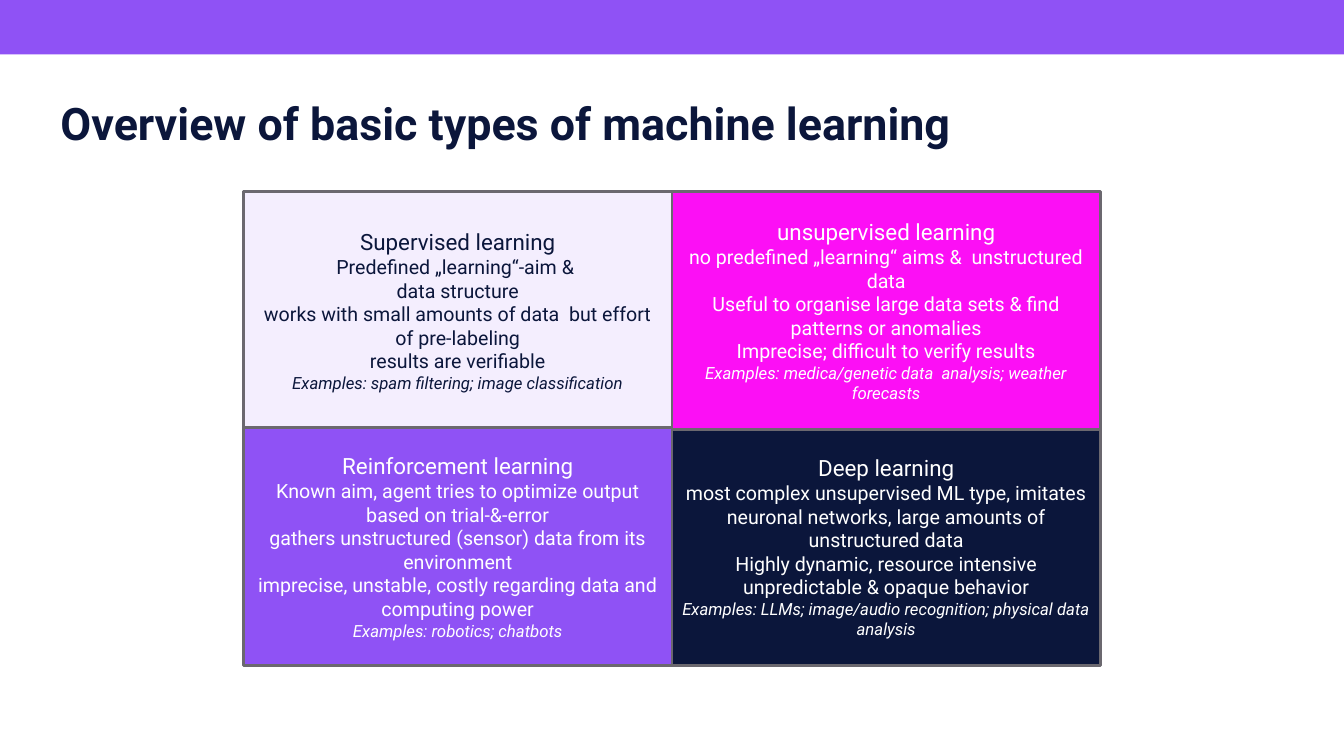
from dataclasses import dataclass

from pptx import Presentation
from pptx.dml.color import RGBColor
from pptx.enum.shapes import MSO_SHAPE
from pptx.enum.text import MSO_ANCHOR, MSO_AUTO_SIZE, PP_ALIGN
from pptx.shapes.autoshape import Shape
from pptx.slide import Slide
from pptx.text.text import Font
from pptx.util import Pt

FONT = "Roboto"
NAVY, PURPLE, LILAC = "0B163B", "8F52F5", "F4EEFE"
MAGENTA, GREY, WHITE = "FC0FF5", "6B686F", "FFFFFF"
GRID_LEFT, GRID_TOP = 174, 136.8
COLUMN_STEP, ROW_STEP = 306, 168.5
CELL_WIDTH, CELL_HEIGHT = 306, 170


@dataclass
class LearningType:
    column: int
    row: int
    fill: str
    ink: str
    heading: str
    traits: list[str]
    examples: str


LEARNING_TYPES = [
    LearningType(0, 0, LILAC, NAVY, "Supervised learning",
                 ["Predefined „learning“-aim & \vdata structure",
                  "works with small amounts of data  but effort of pre-labeling",
                  "results are verifiable"],
                 "Examples: spam filtering; image classification"),
    LearningType(0, 1, PURPLE, WHITE, "Reinforcement learning",
                 ["Known aim, agent tries to optimize output based on trial-&-error",
                  "gathers unstructured (sensor) data from its environment",
                  "imprecise, unstable, costly regarding data and computing power"],
                 "Examples: robotics; chatbots"),
    LearningType(1, 1, NAVY, WHITE, "Deep learning",
                 ["most complex unsupervised ML type, imitates neuronal networks, "
                  "large amounts of unstructured data",
                  "Highly dynamic, resource intensive unpredictable & opaque behavior"],
                 "Examples: LLMs; image/audio recognition; physical data analysis"),
    LearningType(1, 0, MAGENTA, WHITE, "unsupervised learning",
                 ["no predefined „learning“ aims &  unstructured data",
                  "Useful to organise large data sets & find patterns or anomalies",
                  "Imprecise; difficult to verify results"],
                 "Examples: medica/genetic data  analysis; weather forecasts"),
]


def color(value: str) -> RGBColor:
    return RGBColor.from_string(value)


def style(font: Font, size: float, ink: str, bold: bool = False, italic: bool = False) -> None:
    font.name = FONT
    font.size = Pt(size)
    font.color.rgb = color(ink)
    font.bold = bold
    font.italic = italic


def add_box(slide: Slide, left: float, top: float, width: float, height: float, fill: str) -> Shape:
    box = slide.shapes.add_shape(MSO_SHAPE.RECTANGLE, Pt(left), Pt(top), Pt(width), Pt(height))
    box.shadow.inherit = False
    box.fill.solid()
    box.fill.fore_color.rgb = color(fill)
    box.line.fill.background()
    return box


def add_learning_type(slide: Slide, kind: LearningType) -> None:
    box = add_box(slide, GRID_LEFT + kind.column * COLUMN_STEP, GRID_TOP + kind.row * ROW_STEP,
                  CELL_WIDTH, CELL_HEIGHT, kind.fill)
    box.line.color.rgb = color(GREY)
    box.line.width = Pt(2)
    frame = box.text_frame
    frame.word_wrap = True
    frame.vertical_anchor = MSO_ANCHOR.MIDDLE
    lines = [(kind.heading, 16), *((trait, 14) for trait in kind.traits), (kind.examples, 12)]
    for index, (text, size) in enumerate(lines):
        paragraph = frame.add_paragraph() if index else frame.paragraphs[0]
        paragraph.text = text
        paragraph.alignment = PP_ALIGN.CENTER
        style(paragraph.font, size, kind.ink, italic=text == kind.examples)


def set_title(slide: Slide, text: str) -> None:
    title = slide.shapes.title
    title.left, title.top, title.width, title.height = Pt(36), Pt(62.6), Pt(896.4), Pt(65.5)
    frame = title.text_frame
    frame.text = text
    frame.auto_size = MSO_AUTO_SIZE.NONE
    frame.vertical_anchor = MSO_ANCHOR.TOP
    frame.margin_top = Pt(6)
    heading = frame.paragraphs[0]
    heading.alignment = PP_ALIGN.LEFT
    style(heading.font, 32, NAVY, bold=True)


def main() -> None:
    deck = Presentation()
    deck.slide_width, deck.slide_height = Pt(960), Pt(540)
    slide = deck.slides.add_slide(deck.slide_layouts[5])
    add_box(slide, 0, -1.4, 960, 40.3, PURPLE)
    set_title(slide, "Overview of basic types of machine learning")
    for kind in LEARNING_TYPES:
        add_learning_type(slide, kind)
    deck.save("out.pptx")


if __name__ == "__main__":
    main()
